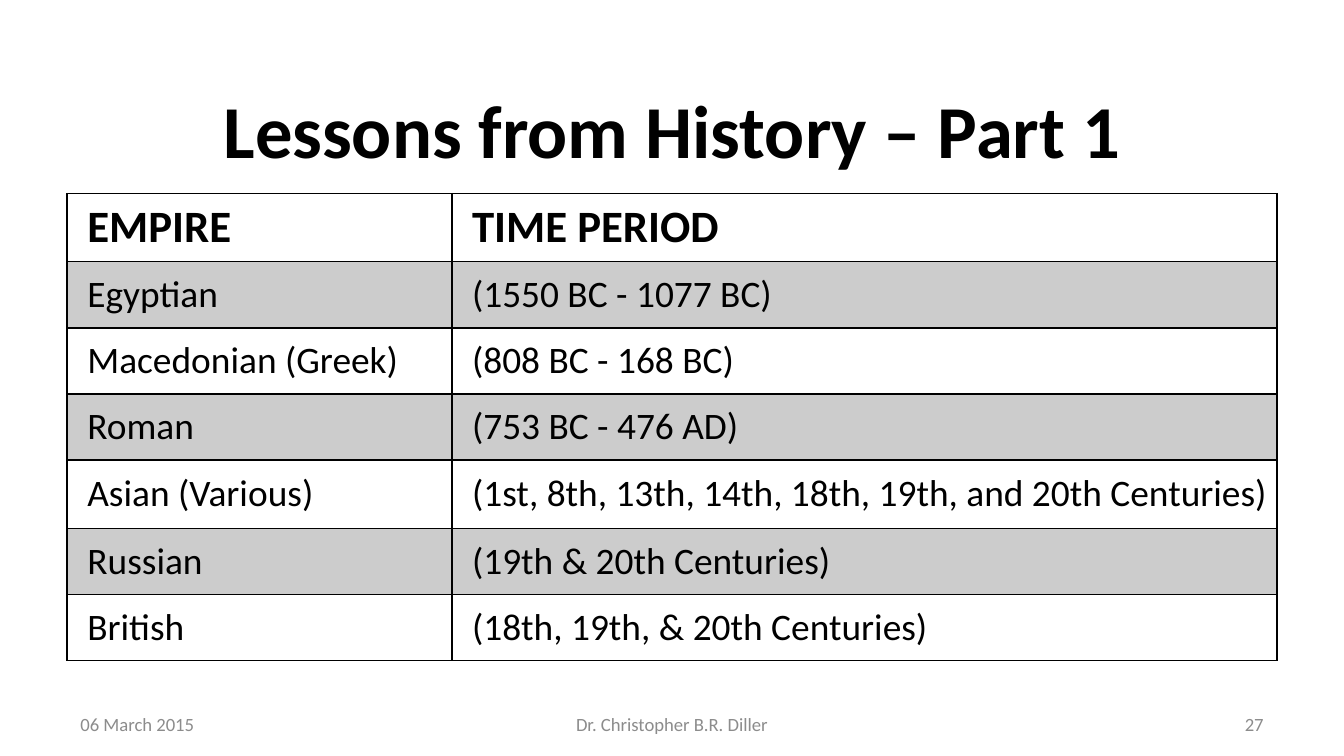
from typing import NamedTuple

from lxml.etree import SubElement
from pptx import Presentation
from pptx.dml.color import RGBColor
from pptx.enum.text import MSO_ANCHOR, PP_ALIGN
from pptx.oxml.ns import qn
from pptx.util import Emu, Pt

FONT = "Calibri"
BLACK = "000000"
GREY = "8C8C8C"


class Note(NamedTuple):
    text: str
    left: int
    width: int
    align: PP_ALIGN


ROWS = [
    ("EMPIRE", "TIME PERIOD"),
    ("Egyptian", "(1550 BC - 1077 BC)"),
    ("Macedonian (Greek)", "(808 BC - 168 BC)"),
    ("Roman", "(753 BC - 476 AD)"),
    ("Asian (Various)", "(1st, 8th, 13th, 14th, 18th, 19th, and 20th Centuries)"),
    ("Russian", "(19th & 20th Centuries)"),
    ("British", "(18th, 19th, & 20th Centuries)"),
]
WIDTHS = [1145, 2455]
HEIGHTS = [200, 197, 197, 197, 203, 197, 197]
NOTES = [
    Note("06 March 2015", 200, 933, PP_ALIGN.LEFT),
    Note("Dr. Christopher B.R. Diller", 1366, 1267, PP_ALIGN.CENTER),
    Note("27", 2867, 933, PP_ALIGN.RIGHT),
]


def px(count: int) -> Emu:
    """Turn px, at 400 to the inch, into EMU."""
    return Emu(count * 2286)


def color(code: str) -> RGBColor:
    return RGBColor.from_string(code)


def style(frame, size: int, code: str, bold: bool = False,
          align: PP_ALIGN = PP_ALIGN.LEFT) -> None:
    for para in frame.paragraphs:
        para.alignment = align
        for run in para.runs:
            font = run.font
            font.name, font.size, font.bold = FONT, Pt(size), bold
            font.color.rgb = color(code)


def frame_cell(cell) -> None:
    """Give the cell a thin black border on all four sides."""
    props = cell._tc.get_or_add_tcPr()
    for side in ("lnL", "lnR", "lnT", "lnB"):
        line = SubElement(props, qn(f"a:{side}"), w=str(Pt(1)))
        fill = SubElement(line, qn("a:solidFill"))
        SubElement(fill, qn("a:srgbClr"), val=BLACK)


def shade(cell, alpha: int) -> None:
    """Fill the cell with black at the given percentage of opacity."""
    cell.fill.solid()
    cell.fill.fore_color.rgb = color(BLACK)
    tint = cell._tc.tcPr.find(f"{qn('a:solidFill')}/{qn('a:srgbClr')}")
    SubElement(tint, qn("a:alpha"), val=str(alpha * 1000))


def draw_title(slide, text: str) -> None:
    title = slide.shapes.title
    title.left, title.top, title.width, title.height = map(px, (200, 240, 3600, 284))
    title.text_frame.text = text
    title.text_frame.vertical_anchor = MSO_ANCHOR.MIDDLE
    style(title.text_frame, 40, BLACK, True, PP_ALIGN.CENTER)


def draw_table(slide) -> None:
    table = slide.shapes.add_table(
        len(ROWS), len(WIDTHS), px(200), px(576), px(sum(WIDTHS)), px(sum(HEIGHTS))
    ).table
    table.horz_banding = False
    for col, width in zip(table.columns, WIDTHS):
        col.width = px(width)
    for i, (row, height, texts) in enumerate(zip(table.rows, HEIGHTS, ROWS)):
        row.height = px(height)
        for cell, text in zip(row.cells, texts):
            cell.text_frame.text = text
            cell.vertical_anchor = MSO_ANCHOR.MIDDLE
            cell.margin_left = px(60)
            cell.margin_right = cell.margin_top = cell.margin_bottom = px(20)
            style(cell.text_frame, 20 if i else 24, BLACK, bold=i == 0)
            frame_cell(cell)
            if i % 2:
                shade(cell, 20)
            else:
                cell.fill.background()


def draw_note(slide, note: Note) -> None:
    box = slide.shapes.add_textbox(px(note.left), px(2116), px(note.width), px(80))
    frame = box.text_frame
    frame.word_wrap = True
    frame.vertical_anchor = MSO_ANCHOR.MIDDLE
    frame.text = note.text
    style(frame, 10, GREY, align=note.align)


def main() -> None:
    deck = Presentation()
    deck.slide_width, deck.slide_height = px(4000), px(2250)
    slide = deck.slides.add_slide(deck.slide_layouts[5])
    draw_title(slide, "Lessons from History – Part 1")
    draw_table(slide)
    for note in NOTES:
        draw_note(slide, note)
    deck.save("out.pptx")


if __name__ == "__main__":
    main()
